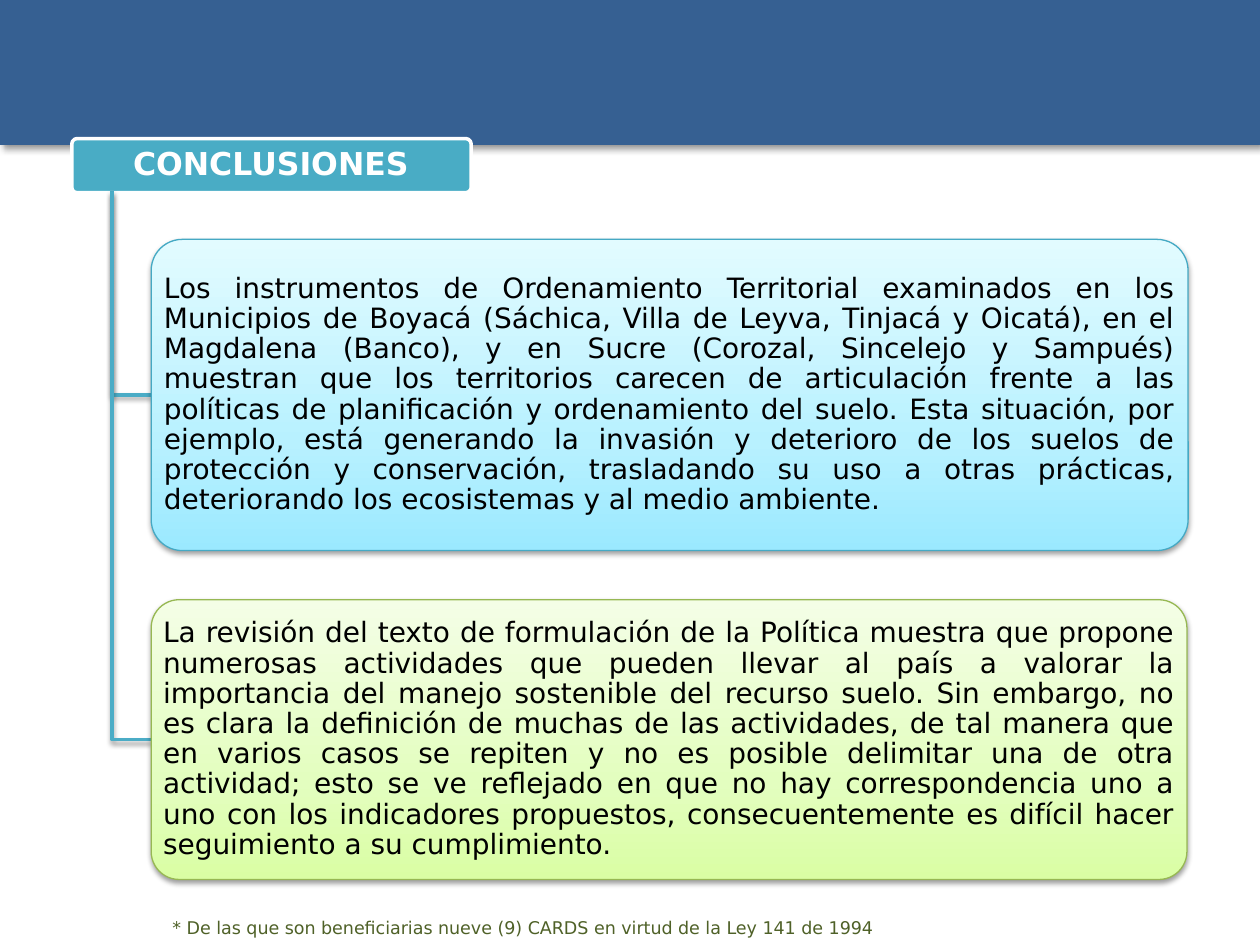
from copy import deepcopy

from pptx import Presentation
from pptx.dml.color import RGBColor
from pptx.enum.shapes import MSO_SHAPE
from pptx.enum.text import MSO_ANCHOR, MSO_AUTO_SIZE, PP_ALIGN
from pptx.oxml import parse_xml
from pptx.oxml.ns import nsdecls, qn
from pptx.util import Inches, Pt

RECT, ROUND = MSO_SHAPE.RECTANGLE, MSO_SHAPE.ROUNDED_RECTANGLE
MIDDLE = MSO_ANCHOR.MIDDLE
CENTER, JUSTIFY = PP_ALIGN.CENTER, PP_ALIGN.JUSTIFY
NO_FIT = MSO_AUTO_SIZE.NONE
FONT = "DejaVu Sans"


def rgb(color):
    return RGBColor.from_string(color)


def add_shadow(sp, alpha=38, blur=3.1, dist=1.6, angle=90):
    sp.shadow.inherit = False
    effects = sp.element.spPr.find(qn("a:effectLst"))
    effects.append(parse_xml(
        f'<a:outerShdw {nsdecls("a")} blurRad="{Pt(blur)}" dist="{Pt(dist)}" '
        f'dir="{angle * 60000}" rotWithShape="0"><a:srgbClr val="000000">'
        f'<a:alpha val="{alpha * 1000}"/></a:srgbClr></a:outerShdw>'))


prs = Presentation()
prs.slide_width, prs.slide_height = Inches(10), Inches(7.5)
s = prs.slides.add_slide(prs.slide_layouts[5])

# Top band
band = s.shapes.add_shape(RECT, 0, 0, prs.slide_width, Inches(1.15))
band.fill.solid()
band.fill.fore_color.rgb = rgb("366092")
band.line.fill.background()
add_shadow(band, 40, 4, 3, 45)

# Heading tab with the title on top of it
tab = s.shapes.add_shape(ROUND, Inches(0.57), Inches(1.1), Inches(3.17), Inches(0.43))
tab.adjustments[0] = 0.1
tab.shadow.inherit = False
tab.fill.solid()
tab.fill.fore_color.rgb = rgb("49ACC5")
tab.line.color.rgb = rgb("FFFFFF")
tab.line.width = Pt(2)

title = s.shapes.title
tab.element.addnext(title.element)
title.left, title.top = Inches(0.58), Inches(1.11)
title.width, title.height = Inches(3.14), Inches(0.4)
tf = title.text_frame
tf.text = "CONCLUSIONES"
tf.auto_size = NO_FIT
tf.vertical_anchor = MIDDLE
tf.margin_left = tf.margin_right = Inches(0.04)
tf.margin_top = tf.margin_bottom = Inches(0.02)
p = tf.paragraphs[0]
p.alignment = CENTER
p.line_spacing = 0.9
p.font.name, p.font.size, p.font.bold = FONT, Pt(18), True
p.font.color.rgb = rgb("FFFFFF")

# Conclusions: top, width, height, line colour, gradient from bottom to top, text
conclusions = [
    (1.9, 8.23, 2.47, "45A9C4", ("9BE9FF", "B8F1FF", "E2FBFF"),
     "Los instrumentos de Ordenamiento Territorial examinados en los Municipios "
     "de Boyacá (Sáchica, Villa de Leyva, Tinjacá y Oicatá), en el Magdalena "
     "(Banco), y en Sucre (Corozal, Sincelejo y Sampués) muestran que los "
     "territorios carecen de articulación frente a las políticas de planificación "
     "y ordenamiento del suelo. Esta situación, por ejemplo, está generando la "
     "invasión y deterioro de los suelos de protección y conservación, "
     "trasladando su uso a otras prácticas, deteriorando los ecosistemas y al "
     "medio ambiente."),
    (4.76, 8.22, 2.22, "97B853", ("DAFEA4", "E3FEBF", "F4FEE6"),
     "La revisión del texto de formulación de la Política muestra que propone "
     "numerosas actividades que pueden llevar al país a valorar la importancia "
     "del manejo sostenible del recurso suelo. Sin embargo, no es clara la "
     "definición de muchas de las actividades, de tal manera que en varios casos "
     "se repiten y no es posible delimitar una de otra actividad; esto se ve "
     "reflejado en que no hay correspondencia uno a uno con los indicadores "
     "propuestos, consecuentemente es difícil hacer seguimiento a su "
     "cumplimiento."),
]
trunk_x, trunk_top, box_left = Inches(0.89), Inches(1.52), Inches(1.2)

for top, width, height, line_color, gradient, text in conclusions:
    # Elbow from the heading to the middle of the box
    middle = Inches(top + height / 2)
    builder = s.shapes.build_freeform(trunk_x, trunk_top)
    builder.add_line_segments([(trunk_x, middle), (box_left, middle)], close=False)
    elbow = builder.convert_to_shape()
    elbow.fill.background()
    elbow.line.color.rgb = rgb("4BACC6")
    elbow.line.width = Pt(2)
    add_shadow(elbow)

    # Box
    box = s.shapes.add_shape(ROUND, box_left, Inches(top), Inches(width), Inches(height))
    box.adjustments[0] = 0.1
    box.fill.gradient()
    box.fill.gradient_angle = 90
    stops = box.element.spPr.find(qn("a:gradFill")).find(qn("a:gsLst"))
    stops.append(deepcopy(stops[0]))
    for stop, position, color in zip(box.fill.gradient_stops, (0, 0.35, 1), gradient):
        stop.position = position
        stop.color.rgb = rgb(color)
    box.line.color.rgb = rgb(line_color)
    box.line.width = Pt(0.75)
    add_shadow(box)

    tf = box.text_frame
    tf.text = text
    tf.word_wrap = True
    tf.vertical_anchor = MIDDLE
    tf.margin_left = tf.margin_right = Inches(0.03)
    tf.margin_top = tf.margin_bottom = Inches(0.02)
    p = tf.paragraphs[0]
    p.alignment = JUSTIFY
    p.line_spacing = 0.9
    p.font.name, p.font.size = FONT, Pt(16)
    p.font.color.rgb = rgb("000000")

# Footnote
note = s.shapes.add_textbox(Inches(1.27), Inches(7.23), Inches(5.93), Inches(0.27))
tf = note.text_frame
tf.text = "* De las que son beneficiarias nueve (9) CARDS en virtud de la Ley 141 de 1994"
tf.word_wrap = True
p = tf.paragraphs[0]
p.font.name, p.font.size = FONT, Pt(10)
p.font.color.rgb = rgb("4F6128")

prs.save("out.pptx")
